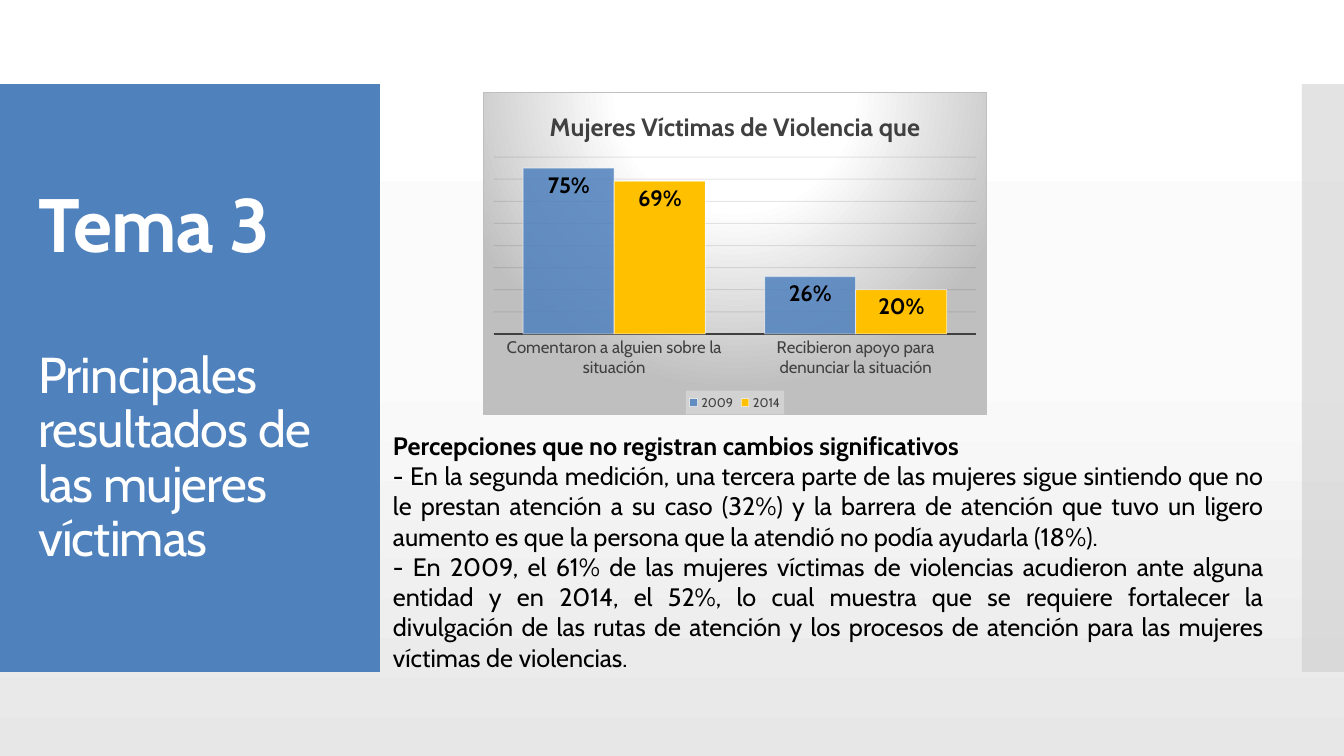
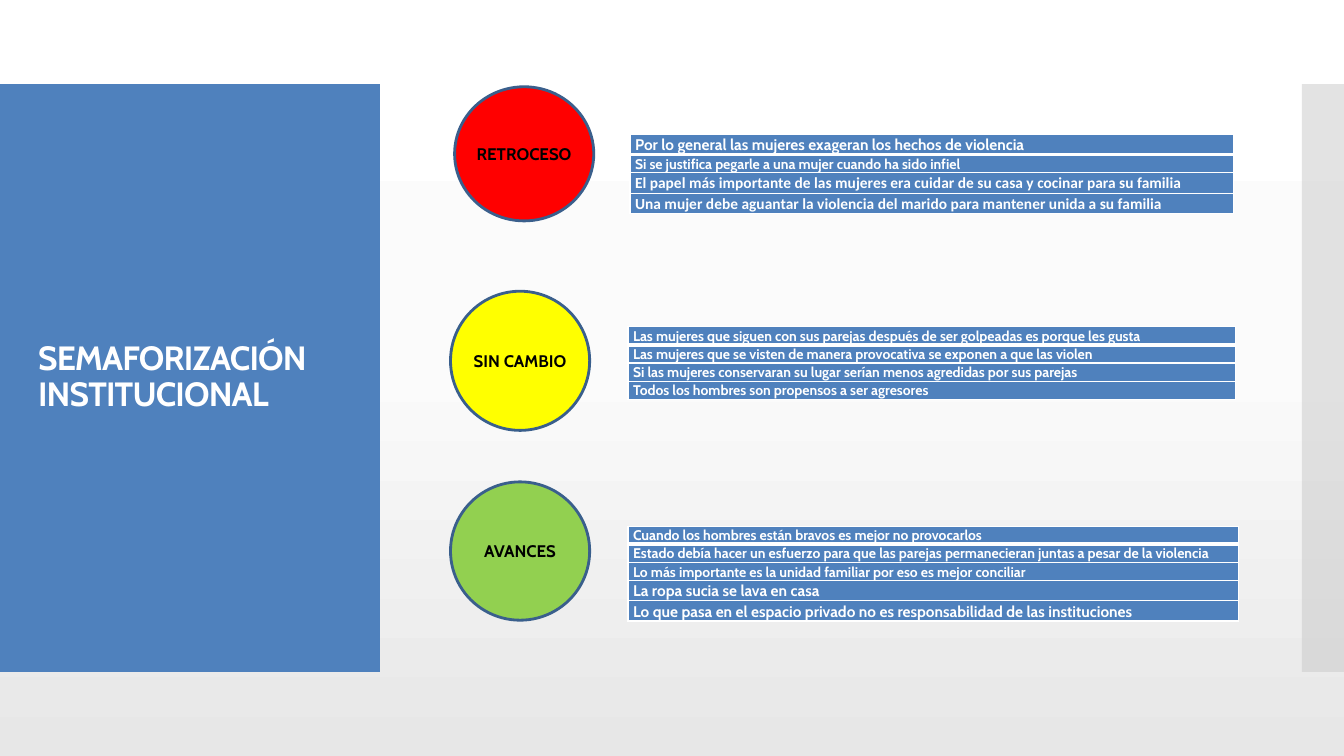
from dataclasses import dataclass

from pptx import Presentation
from pptx.chart.data import CategoryChartData
from pptx.dml.color import RGBColor
from pptx.enum.chart import XL_CHART_TYPE, XL_LABEL_POSITION, XL_LEGEND_POSITION, XL_TICK_MARK
from pptx.enum.shapes import MSO_SHAPE
from pptx.enum.text import MSO_ANCHOR, MSO_AUTO_SIZE, PP_ALIGN
from pptx.oxml import parse_xml
from pptx.oxml.ns import nsdecls, qn
from pptx.util import Pt

COLUMN = XL_CHART_TYPE.COLUMN_CLUSTERED
IN_END = XL_LABEL_POSITION.INSIDE_END
BOTTOM = XL_LEGEND_POSITION.BOTTOM
NO_TICK = XL_TICK_MARK.NONE
RECT, OVAL = MSO_SHAPE.RECTANGLE, MSO_SHAPE.OVAL
MIDDLE = MSO_ANCHOR.MIDDLE
NO_FIT = MSO_AUTO_SIZE.NONE
LEFT, CENTER, JUSTIFY = PP_ALIGN.LEFT, PP_ALIGN.CENTER, PP_ALIGN.JUSTIFY


@dataclass(frozen=True)
class Theme:
    face: str = "Cabin"
    alt: str = "Calibri"
    blue: str = "4F81BD"
    edge: str = "3A5F8C"
    gold: str = "FFC000"
    red: str = "FF0000"
    yellow: str = "FFFF00"
    green: str = "92D050"
    white: str = "FFFFFF"
    black: str = "000000"
    dark: str = "404040"
    grid: str = "0D0D0D"
    gray: str = "C8C8C8"
    frame: str = "BFBFBF"
    pale: str = "F2F2F2"
    huge: int = 54
    large: int = 36
    head: int = 24
    body: int = 18
    value: int = 16
    label: int = 12
    row: int = 11
    small: int = 10
    tiny: int = 9


T = Theme()


def rgb(code):
    return RGBColor.from_string(code)


def box(*sides):
    return [Pt(side) for side in sides]


def paint(fill, color):
    fill.solid()
    fill.fore_color.rgb = rgb(color)


def stroke(line, color, width):
    paint(line.fill, color)
    line.width = Pt(width)


def fade(host, part):
    tone = host.find(".//" + qn("a:srgbClr"))
    tone.append(parse_xml(f'<a:alpha {nsdecls("a")} val="{part * 1000}"/>'))


def blend(stops, kind):
    marks = "".join(
        f'<a:gs pos="{spot * 1000}"><a:srgbClr val="{color}"/></a:gs>' for spot, color in stops
    )
    return f'<a:gradFill {nsdecls("a")} rotWithShape="1"><a:gsLst>{marks}</a:gsLst>{kind}</a:gradFill>'


def style(font, size, color, bold=False, face=T.face):
    font.name, font.size, font.bold = face, Pt(size), bold
    font.color.rgb = rgb(color)


def write(frame, text, first=False, align=LEFT, space=1.0, before=0, track=0, **look):
    para = frame.paragraphs[0] if first else frame.add_paragraph()
    para.text = text
    para.alignment, para.line_spacing, para.space_before = align, space, Pt(before)
    for run in para.runs:
        style(run.font, **look)
        if track:
            run.font._element.set("spc", str(track))


def block(slide, kind, area, color):
    shape = slide.shapes.add_shape(kind, *box(*area))
    shape.shadow.inherit = False
    paint(shape.fill, color)
    shape.line.fill.background()
    return shape


def bands(slide, layout):
    left = block(slide, RECT, (0, 60, 271.4, 420), T.blue)
    right = block(slide, RECT, (930, 60, 30, 420), T.gray)
    fade(right.element.spPr, 50)
    for shape in (right, left):
        layout.shapes.element.insert(2, shape.element)
    layout.background.fill.gradient()
    old = layout.element.find(".//" + qn("a:gradFill"))
    stops = [(0, T.white), (48, "FBFBFB"), (100, "E7E7E7")]
    new = parse_xml(blend(stops, '<a:lin ang="5400000" scaled="0"/>'))
    old.getparent().replace(old, new)


def title(slide, lines):
    head = slide.shapes.title
    head.left, head.top, head.width, head.height = box(20, 88.5, 232, 362)
    frame = head.text_frame
    frame.word_wrap, frame.auto_size, frame.vertical_anchor = True, NO_FIT, MIDDLE
    for spot, (text, look) in enumerate(lines):
        write(frame, text, first=spot == 0, space=0.9, track=-60, color=T.white, **look)


def prose(slide, area, lead, notes):
    frame = slide.shapes.add_textbox(*box(*area)).text_frame
    frame.word_wrap = True
    write(frame, lead, first=True, size=T.body, color=T.black, bold=True)
    for note in notes:
        write(frame, note, align=JUSTIFY, size=T.body, color=T.black)


def place(host, x, y, w, h):
    host.insert_element_before(
        parse_xml(
            f'<c:layout {nsdecls("c")}><c:manualLayout><c:layoutTarget val="inner"/>'
            '<c:xMode val="edge"/><c:yMode val="edge"/>'
            f'<c:x val="{x}"/><c:y val="{y}"/><c:w val="{w}"/><c:h val="{h}"/>'
            "</c:manualLayout></c:layout>"
        ),
        "c:barChart",
    )


def backdrop(root):
    kind = '<a:path path="circle"><a:fillToRect l="50000" t="-80000" r="50000" b="180000"/></a:path>'
    fill = blend([(0, T.white), (39, T.white), (100, T.frame)], kind)
    root.find(qn("c:chart")).addnext(
        parse_xml(
            f'<c:spPr {nsdecls("c", "a")}>{fill}<a:ln w="9525"><a:solidFill>'
            f'<a:srgbClr val="{T.frame}"/></a:solidFill></a:ln></c:spPr>'
        )
    )


def key(chart):
    chart.has_legend = True
    chart.legend.position = BOTTOM
    chart.legend.include_in_layout = False
    style(chart.legend.font, T.tiny, T.dark)
    shade = parse_xml(
        f'<c:spPr {nsdecls("c", "a")}><a:solidFill><a:srgbClr val="{T.pale}"/></a:solidFill></c:spPr>'
    )
    fade(shade, 39)
    chart.legend._element.find(qn("c:txPr")).addprevious(shade)


def graph(slide, area, text, cats, series):
    data = CategoryChartData(number_format="0%")
    data.categories = cats
    for name, values, _ in series:
        data.add_series(name, values)
    chart = slide.shapes.add_chart(COLUMN, *box(*area), data).chart
    root = chart.element
    style(chart.font, T.small, T.black)
    chart.has_title = True
    write(chart.chart_title.text_frame, text, first=True, align=CENTER,
          size=T.body, color=T.dark, bold=True)
    chart.chart_title.include_in_layout = False
    key(chart)

    base, scale = chart.category_axis, chart.value_axis
    base.major_tick_mark = NO_TICK
    style(base.tick_labels.font, T.label, T.dark)
    stroke(base.format.line, T.dark, 1.5)
    scale.visible = False
    scale.minimum_scale, scale.maximum_scale, scale.major_unit = 0, 0.8, 0.1
    stroke(scale.major_gridlines.format.line, T.grid, 0.75)
    fade(root.find(".//" + qn("c:majorGridlines")), 10)

    plot = chart.plots[0]
    plot.gap_width, plot.overlap, plot.vary_by_categories = 65, 0, False
    for bars, node, (_, _, color) in zip(plot.series, root.iter(qn("c:ser")), series):
        paint(bars.format.fill, color)
        if color == T.blue:
            fade(node, 85)
        stroke(bars.format.line, T.white, 0.75)
        fade(node.find(".//" + qn("a:ln")), 50)
        tags = bars.data_labels
        tags.show_value, tags.position = True, IN_END
        tags.number_format, tags.number_format_is_linked = "0%", False
        style(tags.font, T.value, T.black, bold=True)
    zone = root.find(".//" + qn("c:plotArea"))
    for old in zone.findall(qn("c:layout")):
        zone.remove(old)
    place(zone, 0.02, 0.2, 0.96, 0.55)
    backdrop(root)


def lamp(slide, area, text, color):
    shape = block(slide, OVAL, area, color)
    stroke(shape.line, T.edge, 2)
    frame = shape.text_frame
    frame.word_wrap, frame.vertical_anchor = False, MIDDLE
    write(frame, text, first=True, align=CENTER, size=T.label, color=T.black, bold=True)


def border(cell, **sides):
    props = cell._tc.get_or_add_tcPr()
    for spot, (side, width) in enumerate(sides.items()):
        line = parse_xml(
            f'<a:ln{side} {nsdecls("a")} w="{Pt(width)}"><a:solidFill>'
            f'<a:srgbClr val="{T.white}"/></a:solidFill></a:ln{side}>'
        )
        props.insert(spot, line)


def roster(slide, left, top, width, rows):
    highs = [look["size"] * 1.27 for _, look in rows]
    area = box(left, top, width, sum(highs))
    table = slide.shapes.add_table(len(rows), 1, *area).table
    table.first_row = table.horz_banding = False
    for spot, (text, look) in enumerate(rows):
        table.rows[spot].height = Pt(highs[spot])
        cell = table.cell(spot, 0)
        cell.margin_left = cell.margin_right = Pt(3.6)
        cell.margin_top = cell.margin_bottom = 0
        paint(cell.fill, T.blue)
        border(cell, L=1, R=1, T=3 if spot == 1 else 1, B=3 if spot == 0 else 1)
        write(cell.text_frame, text, first=True, align=JUSTIFY, space=1.07,
              color=T.white, bold=True, **look)


def results(slide):
    title(slide, [
        ("Tema 3", dict(size=T.huge, bold=True)),
        ("Principales resultados de las mujeres víctimas", dict(size=T.large, before=58)),
    ])
    prose(slide, (273.6, 303.8, 636, 181), "Percepciones que no registran cambios significativos", [
        "- En la segunda medición, una tercera parte de las mujeres sigue sintiendo que no le prestan "
        "atención a su caso (32%) y la barrera de atención que tuvo un ligero aumento es que la "
        "persona que la atendió no podía ayudarla (18%).",
        "- En 2009, el 61% de las mujeres víctimas de violencias acudieron ante alguna entidad y en "
        "2014, el 52%, lo cual muestra que se requiere fortalecer la divulgación de las rutas de "
        "atención y los procesos de atención para las mujeres víctimas de violencias.",
    ])
    cats = ["Comentaron a alguien sobre la situación", "Recibieron apoyo para denunciar la situación"]
    series = [("2009", (0.75, 0.26), T.blue), ("2014", (0.69, 0.2), T.gold)]
    graph(slide, (345, 66, 360, 230.4), "Mujeres Víctimas de Violencia que", cats, series)


def lights(slide):
    title(slide, [("SEMAFORIZACIÓN\vINSTITUCIONAL", dict(size=T.head, bold=True))])
    mid, low = dict(size=T.row), dict(size=T.small)
    other = dict(size=T.row, face=T.alt)
    groups = [
        ("RETROCESO", T.red, (324.7, 62, 99.4, 95.8), (450, 96, 431), [
            ("Por lo general las mujeres exageran los hechos de violencia", mid),
            ("Si se justifica pegarle a una mujer cuando ha sido infiel", low),
            ("El papel más importante de las mujeres era cuidar de su casa y cocinar para su familia", other),
            ("Una mujer debe aguantar la violencia del marido para mantener unida a su familia", other),
        ]),
        ("SIN CAMBIO", T.yellow, (321.8, 208, 99.4, 99.4), (448.6, 233.3, 434), [
            ("Las mujeres que siguen con sus parejas después de ser golpeadas es porque les gusta", low),
            ("Las mujeres que se visten de manera provocativa se exponen a que las violen", low),
            ("Si las mujeres conservaran su lugar serían menos agredidas por sus parejas", low),
            ("Todos los hombres son propensos a ser agresores", low),
        ]),
        ("AVANCES", T.green, (321.8, 344.2, 99.4, 98.8), (448.6, 375.8, 436), [
            ("Cuando los hombres están bravos es mejor no provocarlos", low),
            ("Estado debía hacer un esfuerzo para que las parejas permanecieran juntas a pesar de la violencia", low),
            ("Lo más importante es la unidad familiar por eso es mejor conciliar", low),
            ("La ropa sucia se lava en casa", mid),
            ("Lo que pasa en el espacio privado no es responsabilidad de las instituciones", mid),
        ]),
    ]
    for name, color, disc, spot, rows in groups:
        lamp(slide, disc, name, color)
        roster(slide, *spot, rows)


def main():
    deck = Presentation()
    deck.slide_width, deck.slide_height = box(960, 540)
    layout = deck.slide_layouts[5]
    first, second = [deck.slides.add_slide(layout) for _ in range(2)]
    bands(first, layout)
    results(first)
    lights(second)
    deck.save("out.pptx")


if __name__ == "__main__":
    main()
